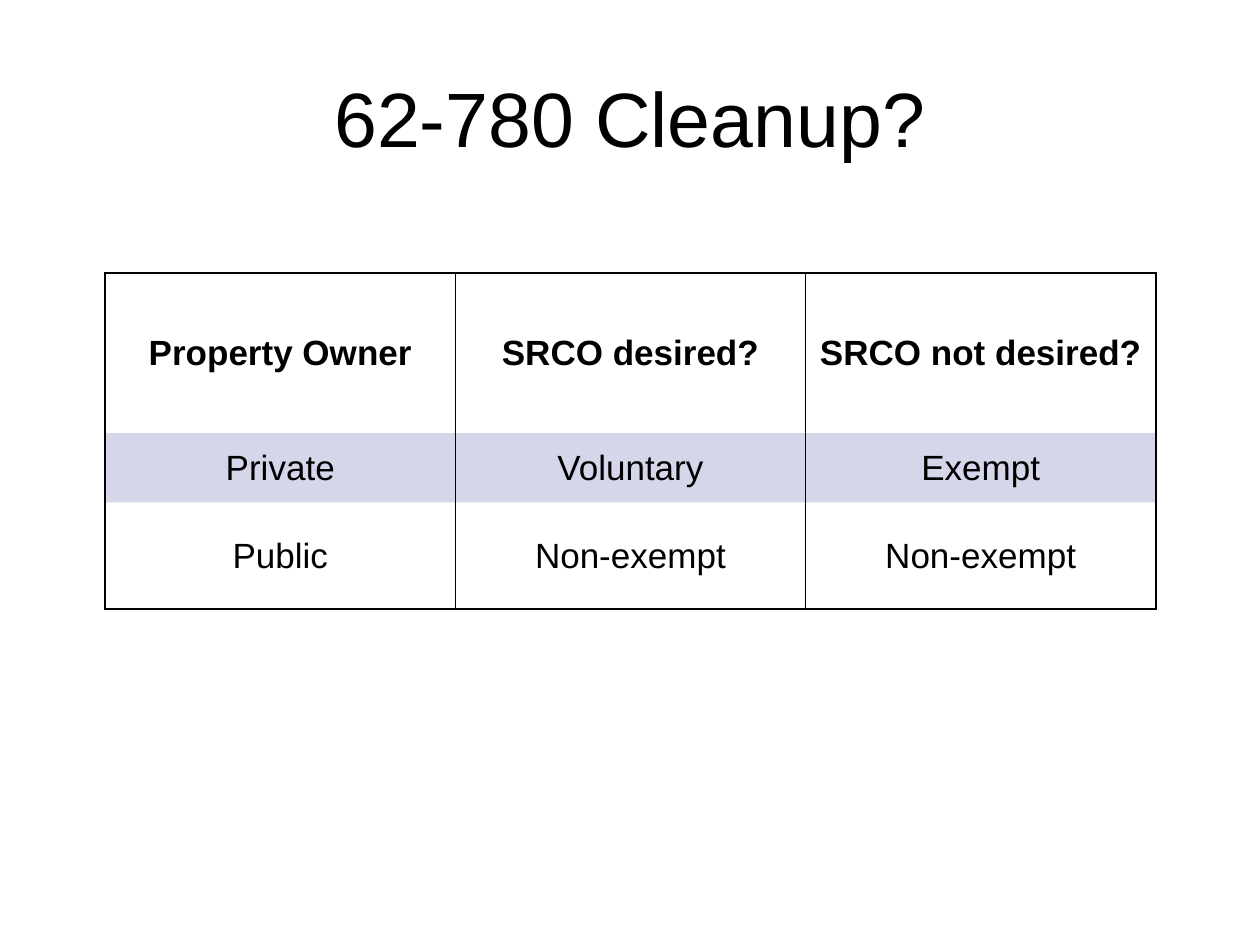
from dataclasses import dataclass

from lxml.etree import SubElement
from pptx import Presentation
from pptx.dml.color import RGBColor
from pptx.enum.text import MSO_ANCHOR as Anchor, PP_ALIGN as Align
from pptx.oxml.ns import qn
from pptx.util import Cm, Pt


@dataclass(frozen=True)
class Theme:
    font: str = "Arial"
    ink: str = "000000"
    band: str = "333399"
    band_opacity: int = 20
    title_size: int = 44
    cell_size: int = 20
    border_width: int = 1


class SlideBuilder:
    def __init__(self, slide, theme):
        self.slide = slide
        self.theme = theme

    def style(self, paragraph, size, bold=False):
        paragraph.alignment = Align.CENTER
        font = paragraph.font
        font.name = self.theme.font
        font.size = Pt(size)
        font.bold = bold
        font.color.rgb = RGBColor.from_string(self.theme.ink)

    def title(self, text, left, top, width, height):
        frame = self.slide.shapes.add_textbox(left, top, width, height).text_frame
        frame.word_wrap = True
        frame.vertical_anchor = Anchor.MIDDLE
        frame.text = text
        self.style(frame.paragraphs[0], self.theme.title_size)

    def borders(self, cell, visible):
        """Draw the visible sides (of L, R, T, B) and clear the others."""
        properties = cell._tc.get_or_add_tcPr()
        for side in "LRTB":
            line = SubElement(properties, qn(f"a:ln{side}"), w=str(Pt(self.theme.border_width)))
            if side in visible:
                fill = SubElement(line, qn("a:solidFill"))
                SubElement(fill, qn("a:srgbClr"), val=self.theme.ink)
            else:
                SubElement(line, qn("a:noFill"))

    def fill(self, cell, banded):
        if not banded:
            cell.fill.background()
            return
        cell.fill.solid()
        cell.fill.fore_color.rgb = RGBColor.from_string(self.theme.band)
        color = cell._tc.tcPr.find(f"{qn('a:solidFill')}/{qn('a:srgbClr')}")
        SubElement(color, qn("a:alpha"), val=str(self.theme.band_opacity * 1000))

    def table(self, rows, left, top, column_width, row_heights):
        """Build a table with a bold header and every second row tinted."""
        columns = len(rows[0])
        table = self.slide.shapes.add_table(
            len(rows), columns, left, top, column_width * columns, sum(row_heights)
        ).table
        table.horz_banding = False
        table.first_row = False
        for column in table.columns:
            column.width = column_width
        last = len(rows) - 1
        for i, texts in enumerate(rows):
            table.rows[i].height = row_heights[i]
            sides = "LR" + ("T" if i == 0 else "") + ("B" if i == last else "")
            for j, text in enumerate(texts):
                cell = table.cell(i, j)
                cell.text = text
                cell.vertical_anchor = Anchor.MIDDLE
                cell.margin_left = cell.margin_right = cell.margin_top = Cm(0.02)
                cell.margin_bottom = 0
                self.style(cell.text_frame.paragraphs[0], self.theme.cell_size, bold=i == 0)
                self.borders(cell, sides)
                self.fill(cell, banded=i % 2 == 1)


def main():
    presentation = Presentation()
    presentation.slide_width = Cm(25.4)
    presentation.slide_height = Cm(19.05)
    slide = presentation.slides.add_slide(presentation.slide_layouts[6])
    builder = SlideBuilder(slide, Theme())
    builder.title("62-780 Cleanup?", Cm(1.27), Cm(0.76), Cm(22.86), Cm(3.18))
    builder.table(
        [
            ["Property Owner", "SRCO desired?", "SRCO not desired?"],
            ["Private", "Voluntary", "Exempt"],
            ["Public", "Non-exempt", "Non-exempt"],
        ],
        left=Cm(2.12),
        top=Cm(5.5),
        column_width=Cm(7.06),
        row_heights=[Cm(3.23), Cm(1.4), Cm(2.15)],
    )
    presentation.save("out.pptx")


if __name__ == "__main__":
    main()
